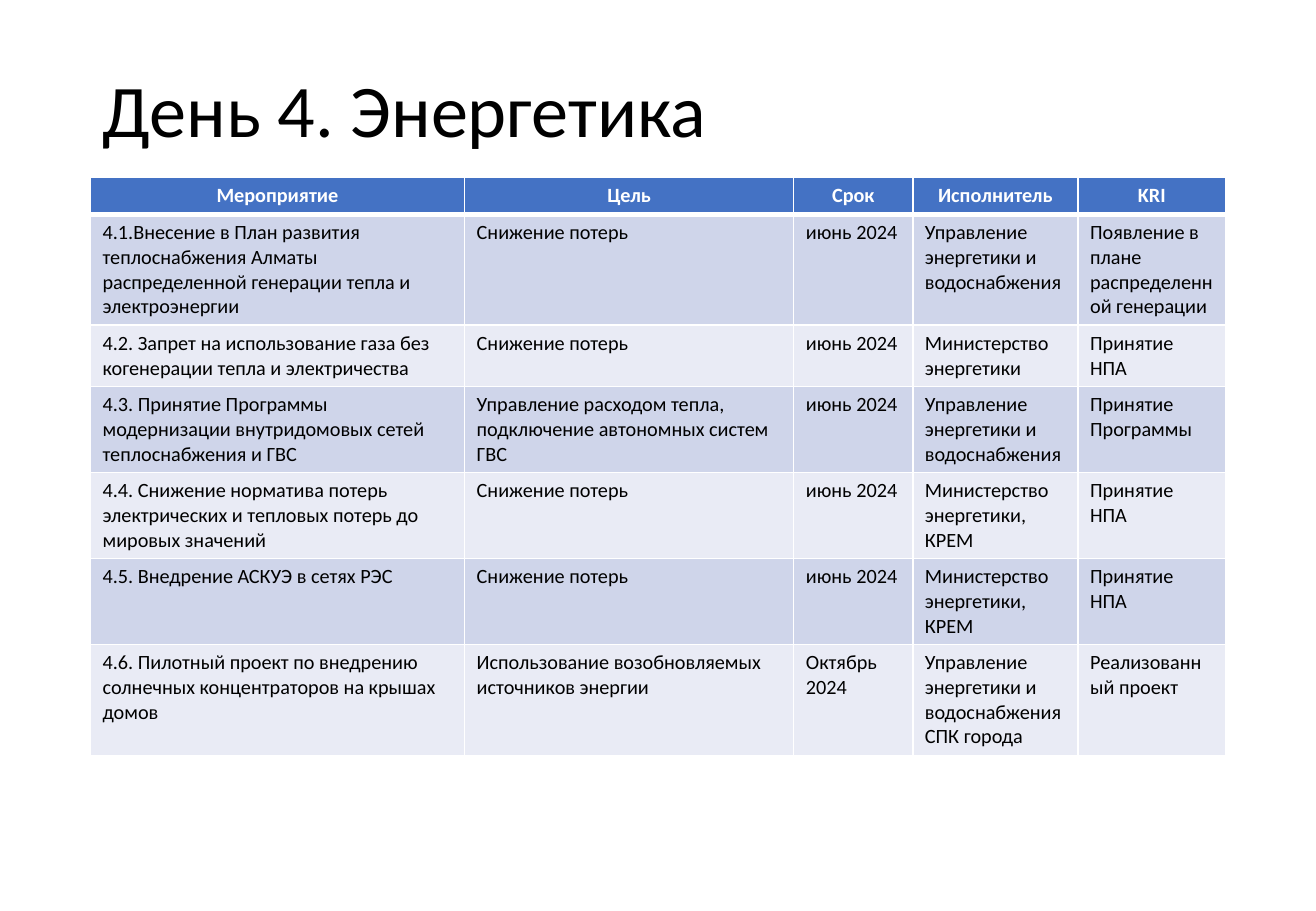
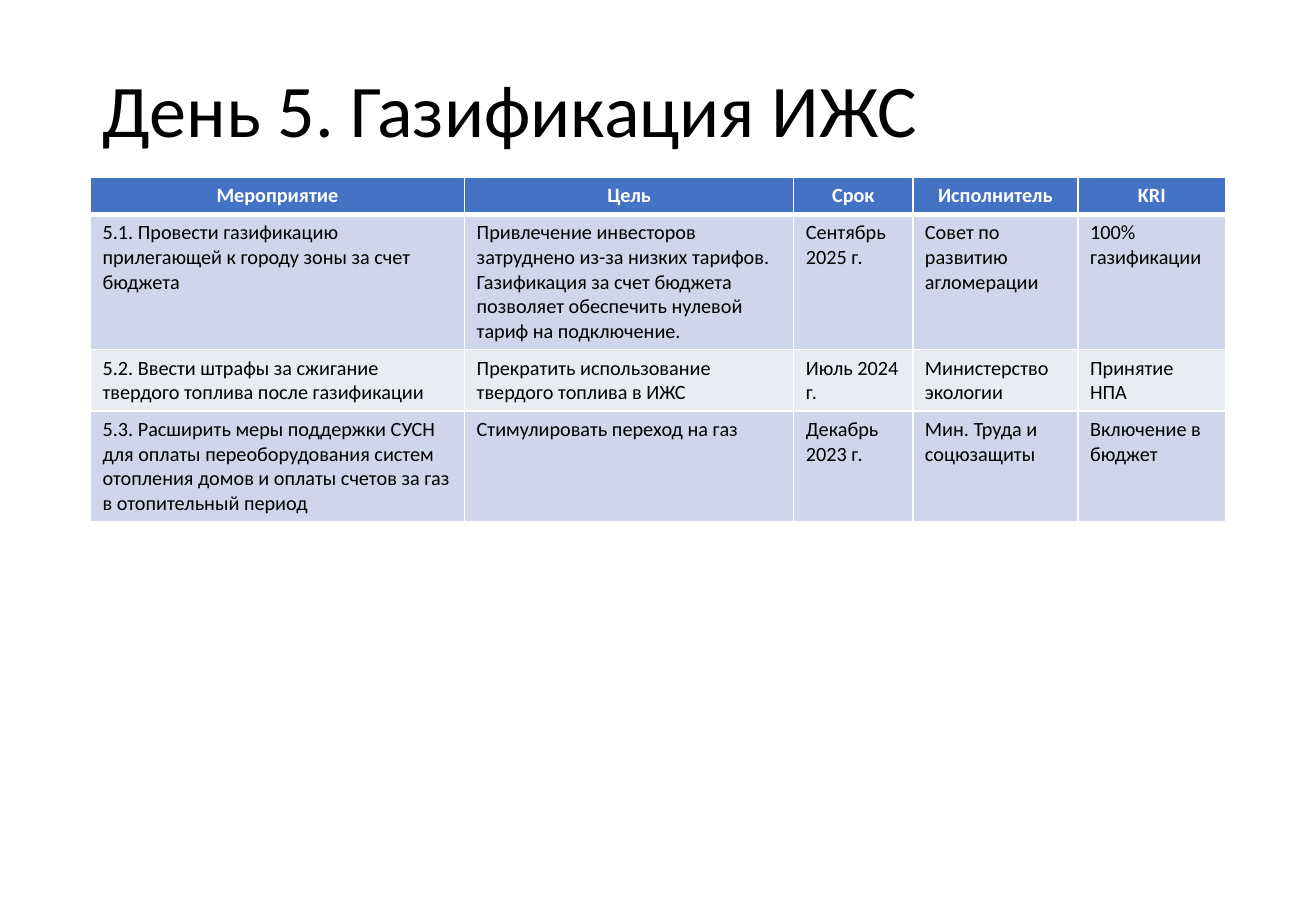
"""Build two slides, each a title above a table of planned measures."""
import lxml.etree
import pptx
import pptx.dml.color
import pptx.enum.text
import pptx.oxml.ns
import pptx.util

Pt = pptx.util.Pt
qualified = pptx.oxml.ns.qn
FONT = "Calibri"
COLORS = {"header": "4472C4", "odd": "CFD5EA", "even": "E9EBF5",
          "text": "000000", "header_text": "FFFFFF", "border": "FFFFFF"}
SLIDE_WIDTH, SLIDE_HEIGHT = 780, 540
LEFT, TITLE_TOP, TITLE_HEIGHT = 53.6, 29.1, 76.3
TABLE_TOP = 105.3
LINE_HEIGHT, CELL_PADDING = 14.6, 7.2
BORDER_WIDTH, HEADER_RULE_WIDTH = 1, 3
COLUMN_WIDTHS = (221.76, 195.12, 70.56, 97.92, 87.6)
HEADER = ("Мероприятие", "Цель", "Срок", "Исполнитель", "KRI")

SLIDES = [
    {
        "title": "День 4. Энергетика",
        "line_counts": (1, 4, 2, 3, 3, 3, 4),
        "rows": [
            ("4.1.Внесение в План развития теплоснабжения Алматы распределенной генерации тепла и электроэнергии",
             "Снижение потерь", "июнь 2024", "Управление энергетики и водоснабжения",
             "Появление в плане распределенной генерации"),
            ("4.2. Запрет на использование газа без когенерации тепла и электричества",
             "Снижение потерь", "июнь 2024", "Министерство энергетики", "Принятие НПА"),
            ("4.3. Принятие Программы модернизации внутридомовых сетей теплоснабжения и ГВС",
             "Управление расходом тепла, подключение автономных систем ГВС",
             "июнь 2024", "Управление энергетики и водоснабжения", "Принятие Программы"),
            ("4.4. Снижение норматива потерь электрических и тепловых потерь до мировых значений",
             "Снижение потерь", "июнь 2024", "Министерство энергетики,\nКРЕМ", "Принятие НПА"),
            ("4.5. Внедрение АСКУЭ в сетях РЭС",
             "Снижение потерь", "июнь 2024", "Министерство энергетики,\nКРЕМ", "Принятие НПА"),
            ("4.6. Пилотный проект по внедрению солнечных концентраторов на крышах домов",
             "Использование возобновляемых источников энергии", "Октябрь 2024",
             "Управление энергетики и водоснабжения\nСПК города", "Реализованный проект"),
        ],
    },
    {
        "title": "День 5. Газификация ИЖС",
        "line_counts": (1, 5, 2, 4),
        "rows": [
            ("5.1. Провести газификацию прилегающей к городу зоны за счет бюджета",
             "Привлечение инвесторов затруднено из-за низких тарифов. Газификация за счет бюджета "
             "позволяет обеспечить нулевой тариф на подключение.",
             "Сентябрь 2025 г.", "Совет по развитию агломерации", "100% газификации"),
            ("5.2. Ввести штрафы за сжигание твердого топлива после газификации",
             "Прекратить использование твердого топлива в ИЖС",
             "Июль 2024 г.", "Министерство экологии", "Принятие НПА"),
            ("5.3. Расширить меры поддержки СУСН для оплаты переоборудования систем отопления домов "
             "и оплаты счетов за газ в отопительный период",
             "Стимулировать переход на газ", "Декабрь 2023 г.",
             "Мин. Труда и соцюзащиты", "Включение в бюджет"),
        ],
    },
]


def color(name):
    return pptx.dml.color.RGBColor.from_string(COLORS[name])


def set_font(paragraph, size, color_name, bold=False):
    font = paragraph.font
    font.name, font.size, font.bold = FONT, Pt(size), bold
    font.color.rgb = color(color_name)


def add_title(slide, text):
    box = slide.shapes.add_textbox(Pt(LEFT), Pt(TITLE_TOP), Pt(sum(COLUMN_WIDTHS)), Pt(TITLE_HEIGHT))
    frame = box.text_frame
    frame.word_wrap = True
    frame.vertical_anchor = pptx.enum.text.MSO_ANCHOR.MIDDLE
    frame.text = text
    frame.paragraphs[0].line_spacing = 0.9
    set_font(frame.paragraphs[0], 44, "text")


def set_borders(cell, row_index):
    widths = {"a:lnL": BORDER_WIDTH, "a:lnR": BORDER_WIDTH,
              "a:lnT": HEADER_RULE_WIDTH if row_index == 1 else BORDER_WIDTH,
              "a:lnB": HEADER_RULE_WIDTH if row_index == 0 else BORDER_WIDTH}
    properties = cell._tc.get_or_add_tcPr()
    for position, (tag, width) in enumerate(widths.items()):
        line = lxml.etree.Element(qualified(tag), w=str(Pt(width)))
        fill = lxml.etree.SubElement(line, qualified("a:solidFill"))
        lxml.etree.SubElement(fill, qualified("a:srgbClr"), val=COLORS["border"])
        properties.insert(position, line)


def fill_cell(cell, text, row_index):
    is_header = row_index == 0
    fill_name = "header" if is_header else "odd" if row_index % 2 else "even"
    cell.fill.solid()
    cell.fill.fore_color.rgb = color(fill_name)
    set_borders(cell, row_index)
    cell.text = text
    for paragraph in cell.text_frame.paragraphs:
        set_font(paragraph, 12, "header_text" if is_header else "text", is_header)
        if is_header:
            paragraph.alignment = pptx.enum.text.PP_ALIGN.CENTER


def add_measures_table(slide, rows, line_counts):
    heights = [count * LINE_HEIGHT + CELL_PADDING for count in line_counts]
    table = slide.shapes.add_table(len(heights), len(HEADER), Pt(LEFT), Pt(TABLE_TOP),
                                   Pt(sum(COLUMN_WIDTHS)), Pt(sum(heights))).table
    for column, width in zip(table.columns, COLUMN_WIDTHS):
        column.width = Pt(width)
    for row_index, (texts, height) in enumerate(zip([HEADER, *rows], heights)):
        table.rows[row_index].height = Pt(height)
        for column_index, text in enumerate(texts):
            fill_cell(table.cell(row_index, column_index), text, row_index)


def main():
    presentation = pptx.Presentation()
    presentation.slide_width, presentation.slide_height = Pt(SLIDE_WIDTH), Pt(SLIDE_HEIGHT)
    for content in SLIDES:
        slide = presentation.slides.add_slide(presentation.slide_layouts[6])
        add_title(slide, content["title"])
        add_measures_table(slide, content["rows"], content["line_counts"])
    presentation.save("out.pptx")


if __name__ == "__main__":
    main()
